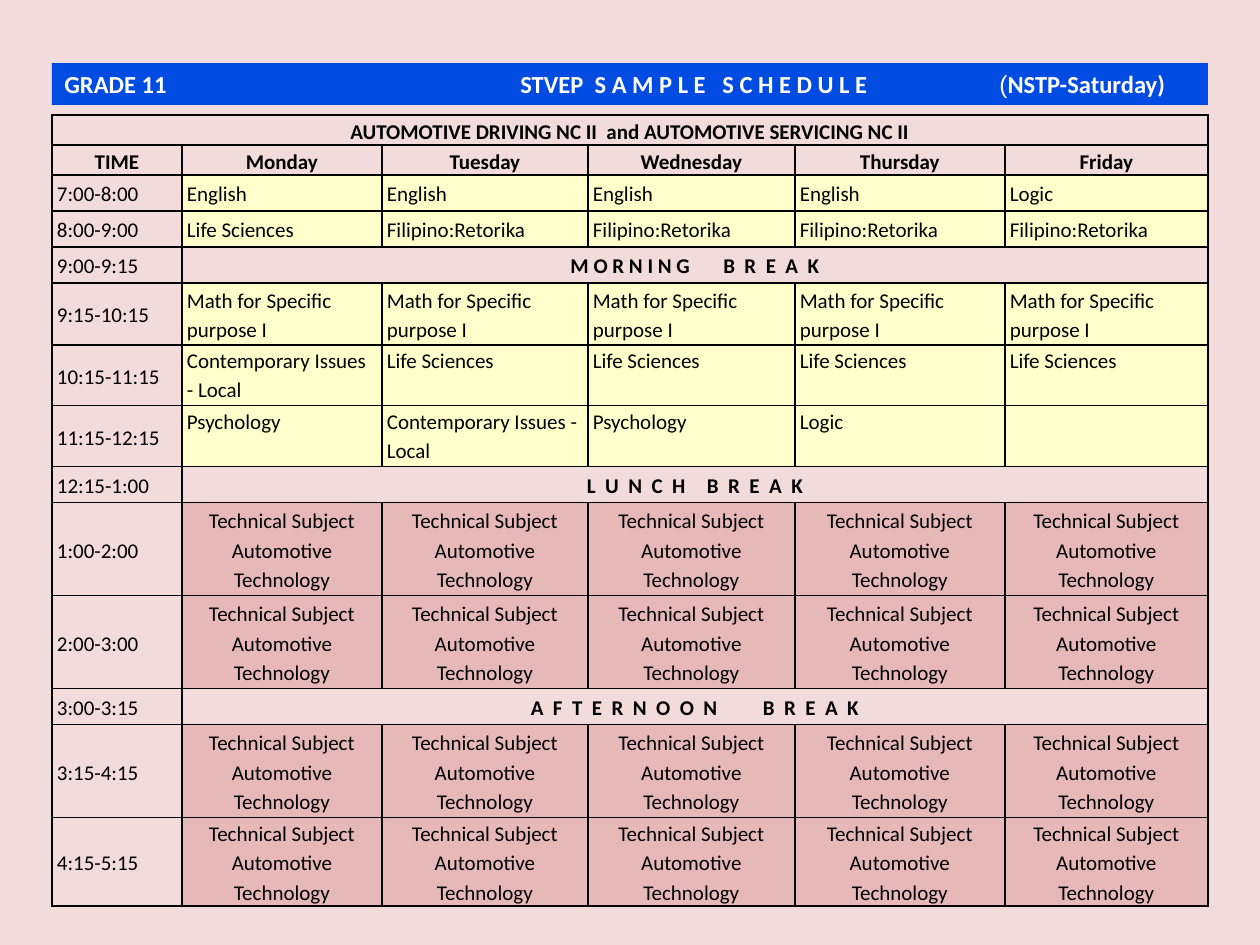
import lxml.etree
import pptx
import pptx.dml.color
import pptx.enum.shapes
import pptx.enum.text
import pptx.oxml.ns
import pptx.util

SCALE = 914400 / 126
COLORS = {"page": "F2DCDB", "banner": "004BE2", "academic": "FFFFCC",
          "technical": "E6B9B8", "text": "000000", "light": "FFFFFF"}
ALIGN = pptx.enum.text.PP_ALIGN
MIDDLE = pptx.enum.text.MSO_ANCHOR.MIDDLE
TOP = pptx.enum.text.MSO_ANCHOR.TOP

COLUMNS = [130, 200, 206, 207, 210, 203]
TITLE = "AUTOMOTIVE DRIVING NC II  and AUTOMOTIVE SERVICING NC II"
HEADINGS = ["TIME", "Monday", "Tuesday", "Wednesday", "Thursday", "Friday"]
MATH = ["Math for Specific purpose I"] * 5
ISSUES = "Contemporary Issues - Local"
SCIENCE = "Life Sciences"
WORKSHOP = ["Technical Subject\nAutomotive Technology"] * 5
MORNING = [("M O R N I N G", 0), (" ", 16.3), ("B R E A K", 1.36)]
LUNCH = [("L U N C H", 1.36), (" ", 8.1), ("B R E A K", 1.36)]
AFTERNOON = [("A F T E R N O O N", 1.36), (" ", 21.7), ("B R E A K", 1.36)]
SCHEDULE = [
    ("7:00-8:00", 36, "academic", ["English"] * 4 + ["Logic"]),
    ("8:00-9:00", 36, "academic", [SCIENCE] + ["Filipino:Retorika"] * 4),
    ("9:00-9:15", 36, "break", MORNING),
    ("9:15-10:15", 62, "academic", MATH),
    ("10:15-11:15", 61, "top", [ISSUES] + [SCIENCE] * 4),
    ("11:15-12:15", 61, "top", ["Psychology", ISSUES, "Psychology", "Logic", ""]),
    ("12:15-1:00", 36, "break", LUNCH),
    ("1:00-2:00", 93, "technical", WORKSHOP),
    ("2:00-3:00", 93, "technical", WORKSHOP),
    ("3:00-3:15", 36, "break", AFTERNOON),
    ("3:15-4:15", 93, "technical", WORKSHOP),
    ("4:15-5:15", 88, "technical", WORKSHOP),
]


def px(length):
    return pptx.util.Emu(round(length * SCALE))


def color(name):
    return pptx.dml.color.RGBColor.from_string(COLORS[name])


class Painter:
    """Draws styled elements on the current slide."""

    def __init__(self, deck, font="Calibri"):
        self.font = font
        self.page = deck.slides.add_slide(deck.slide_layouts[6])
        self.page.background.fill.solid()
        self.page.background.fill.fore_color.rgb = color("page")

    def style(self, para, size, bold, tint, align):
        para.alignment = align
        para.font.name = self.font
        para.font.size = pptx.util.Pt(size)
        para.font.bold = bold
        para.font.color.rgb = color(tint)

    def spans(self, para, pieces):
        for text, spacing in pieces:
            span = para.add_run()
            span.text = text
            if spacing:
                span._r.get_or_add_rPr().set("spc", str(round(spacing * 100)))

    def banner(self, left, top, width, height, pieces, stops):
        box = self.page.shapes.add_shape(pptx.enum.shapes.MSO_SHAPE.RECTANGLE,
                                         px(left), px(top), px(width), px(height))
        box.shadow.inherit = False
        box.fill.solid()
        box.fill.fore_color.rgb = color("banner")
        box.line.fill.background()
        box.text_frame.word_wrap = True
        box.text_frame.vertical_anchor = MIDDLE
        para = box.text_frame.paragraphs[0]
        tabs = lxml.etree.SubElement(para._p.get_or_add_pPr(), pptx.oxml.ns.qn("a:tabLst"))
        for stop in stops:
            lxml.etree.SubElement(tabs, pptx.oxml.ns.qn("a:tab"), pos=str(px(stop)), algn="l")
        self.style(para, 14, True, "light", ALIGN.LEFT)
        self.spans(para, pieces)
        return para

    def table(self, left, top, columns, rows):
        frame = self.page.shapes.add_table(len(rows), len(columns), px(left), px(top),
                                           px(sum(columns)), px(sum(rows)))
        grid = frame.table
        grid.first_row = grid.horz_banding = False
        for column, width in zip(grid.columns, columns):
            column.width = px(width)
        for row, height in zip(grid.rows, rows):
            row.height = px(height)
            for cell in row.cells:
                self.border(cell)
                cell.fill.background()
        return grid

    def border(self, cell):
        properties = cell._tc.get_or_add_tcPr()
        for side in ("a:lnL", "a:lnR", "a:lnT", "a:lnB"):
            line = lxml.etree.SubElement(properties, pptx.oxml.ns.qn(side), w="12700")
            fill = lxml.etree.SubElement(line, pptx.oxml.ns.qn("a:solidFill"))
            lxml.etree.SubElement(fill, pptx.oxml.ns.qn("a:srgbClr"), val=COLORS["text"])

    def cell(self, cell, pieces, fill=None, bold=False, align=ALIGN.LEFT, anchor=MIDDLE, after=0):
        cell.margin_left = cell.margin_right = px(5)
        cell.margin_top = cell.margin_bottom = 0
        cell.vertical_anchor = anchor
        if fill:
            cell.fill.solid()
            cell.fill.fore_color.rgb = color(fill)
        if isinstance(pieces, str):
            cell.text = pieces
        else:
            self.spans(cell.text_frame.paragraphs[0], pieces)
        for para in cell.text_frame.paragraphs:
            para.line_spacing = 1.15
            para.space_after = pptx.util.Pt(after)
            self.style(para, 12, bold, "text", align)


def main():
    deck = pptx.Presentation()
    deck.slide_width, deck.slide_height = px(1260), px(945)
    painter = Painter(deck)

    heights = [30, 30] + [height for _, height, _, _ in SCHEDULE]
    grid = painter.table(52, 115, COLUMNS, heights)
    heading = {"bold": True, "align": ALIGN.CENTER, "after": 6}
    grid.cell(0, 0).merge(grid.cell(0, 5))
    painter.cell(grid.cell(0, 0), TITLE, **heading)
    for column, name in enumerate(HEADINGS):
        painter.cell(grid.cell(1, column), name, **heading)

    for row, (time, _, kind, subjects) in enumerate(SCHEDULE, 2):
        after = 6 if kind in ("academic", "break") else 0
        painter.cell(grid.cell(row, 0), time, after=after)
        if kind == "break":
            grid.cell(row, 1).merge(grid.cell(row, 5))
            painter.cell(grid.cell(row, 1), subjects, **heading)
            continue
        technical = kind == "technical"
        for column, subject in enumerate(subjects, 1):
            painter.cell(grid.cell(row, column), subject,
                         fill="technical" if technical else "academic",
                         align=ALIGN.CENTER if technical else ALIGN.LEFT,
                         anchor=TOP if kind == "top" else MIDDLE, after=after)

    pieces = [("GRADE 11\tSTVEP", 0), (" ", 3.2), ("S A M P L E", 0), (" ", 6.3),
              ("S C H E D U L E\t", 0), ("(", 0), ("NSTP-Saturday)", 0)]
    para = painter.banner(52, 63, 1156, 42, pieces, [456, 935])
    bracket = para.runs[-2]
    bracket.font.name = "Arial"
    bracket.font.bold = False

    deck.save("out.pptx")


if __name__ == "__main__":
    main()
